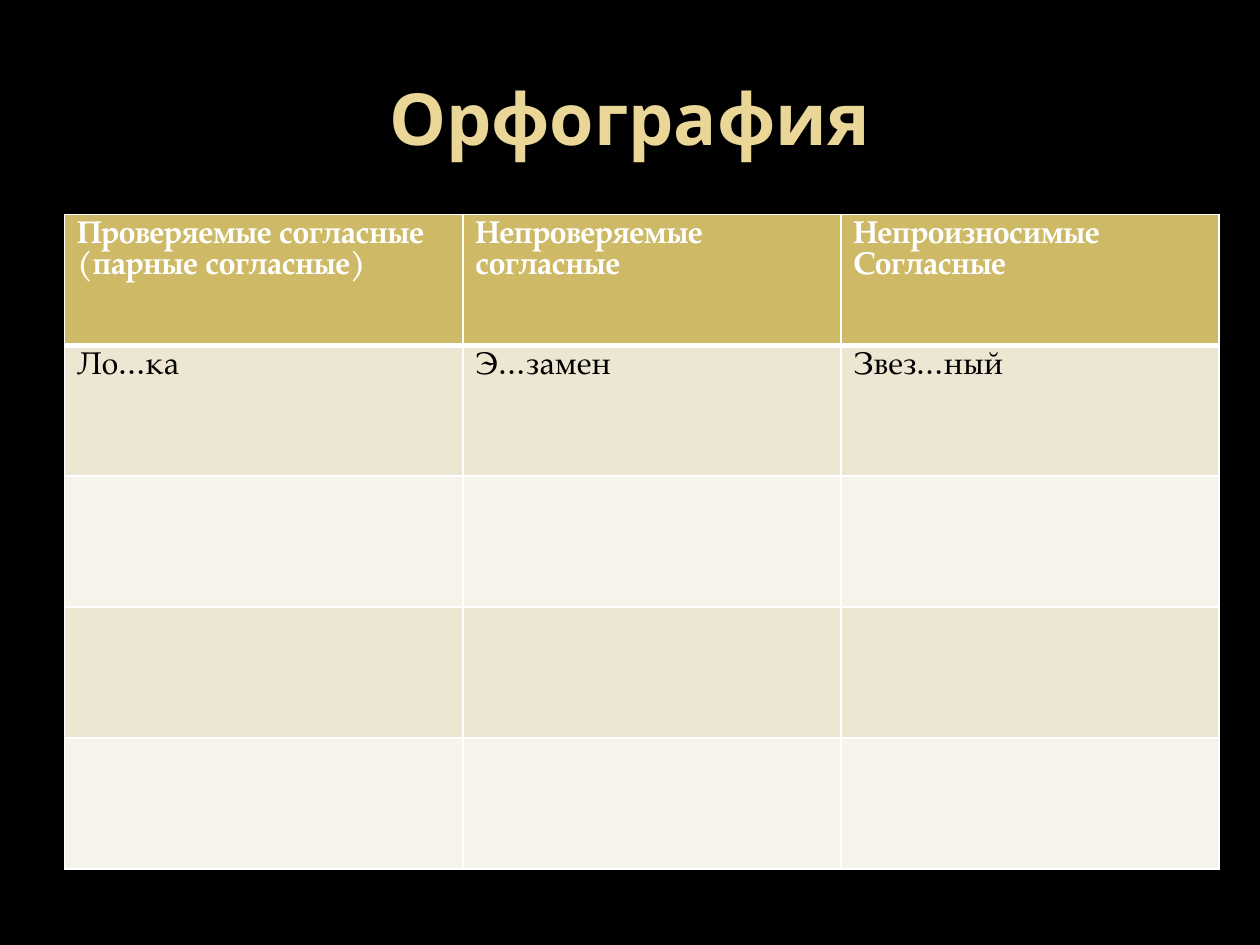
from dataclasses import dataclass

from lxml.etree import SubElement
from pptx import Presentation
from pptx.dml.color import RGBColor
from pptx.enum.text import MSO_ANCHOR, PP_ALIGN
from pptx.oxml.ns import qn
from pptx.util import Cm, Pt

COLORS = {
    "background": "000000",
    "title": "EAD696",
    "header": "CEB966",
    "band_dark": "EDE6D3",
    "band_light": "F6F3EA",
    "header_text": "FFFFFF",
    "word_text": "000000",
    "border": "FFFFFF",
}
TITLE_FONT, TABLE_FONT = "Open Sans", "TeX Gyre Pagella"
COLUMN_WIDTHS = (Cm(8.03), Cm(7.62), Cm(7.62))
ROW_HEIGHT = Cm(2.64)


@dataclass(frozen=True)
class RowStyle:
    fill: str
    text: str
    bold: bool = False
    bottom_border: float = 1


HEADER = RowStyle("header", "header_text", bold=True, bottom_border=3)
DARK = RowStyle("band_dark", "word_text")
LIGHT = RowStyle("band_light", "word_text")

EXERCISE = (
    (HEADER, ("Проверяемые согласные\n(парные согласные)",
              "Непроверяемые согласные",
              "Непроизносимые\nСогласные")),
    (DARK, ("Ло…ка", "Э…замен", "Звез…ный")),
    (LIGHT, ("", "", "")),
    (DARK, ("", "", "")),
    (LIGHT, ("", "", "")),
)


def rgb(name: str) -> RGBColor:
    return RGBColor.from_string(COLORS[name])


def format_font(font, face: str, size: float, color: str, bold: bool) -> None:
    font.name = face
    font.size = Pt(size)
    font.bold = bold
    font.color.rgb = rgb(color)


def add_borders(cell, top: float, bottom: float) -> None:
    """Border lines must precede the fill in the cell properties."""
    properties = cell._tc.get_or_add_tcPr()
    for side, width in (("L", 1), ("R", 1), ("T", top), ("B", bottom)):
        line = SubElement(properties, qn(f"a:ln{side}"), w=str(Pt(width)))
        fill = SubElement(line, qn("a:solidFill"))
        SubElement(fill, qn("a:srgbClr"), val=COLORS["border"])


def fill_cell(cell, text: str, style: RowStyle, top_border: float) -> None:
    add_borders(cell, top_border, style.bottom_border)
    cell.fill.solid()
    cell.fill.fore_color.rgb = rgb(style.fill)
    cell.text_frame.text = text
    for paragraph in cell.text_frame.paragraphs:
        for run in paragraph.runs:
            format_font(run.font, TABLE_FONT, 18, style.text, style.bold)


def add_title(slide, text: str) -> None:
    title = slide.shapes.title
    title.left, title.top = Cm(1.27), Cm(0.76)
    title.width, title.height = Cm(22.86), Cm(3.18)
    title.text_frame.text = text
    title.text_frame.vertical_anchor = MSO_ANCHOR.MIDDLE
    heading = title.text_frame.paragraphs[0]
    heading.alignment = PP_ALIGN.CENTER
    format_font(heading.runs[0].font, TITLE_FONT, 41, "title", True)


def add_exercise_table(slide) -> None:
    table = slide.shapes.add_table(
        len(EXERCISE), len(COLUMN_WIDTHS), Cm(1.3), Cm(4.32),
        sum(COLUMN_WIDTHS), ROW_HEIGHT * len(EXERCISE)).table
    for column, width in zip(table.columns, COLUMN_WIDTHS):
        column.width = width
    top_border = 1
    for row, (style, texts) in zip(table.rows, EXERCISE):
        row.height = ROW_HEIGHT
        for cell, text in zip(row.cells, texts):
            fill_cell(cell, text, style, top_border)
        top_border = style.bottom_border


def main() -> None:
    presentation = Presentation()
    presentation.slide_width, presentation.slide_height = Cm(25.4), Cm(19.05)
    title_only = presentation.slide_layouts[5]
    slide = presentation.slides.add_slide(title_only)
    slide.background.fill.solid()
    slide.background.fill.fore_color.rgb = rgb("background")
    add_title(slide, "Орфография")
    add_exercise_table(slide)
    presentation.save("out.pptx")


if __name__ == "__main__":
    main()
